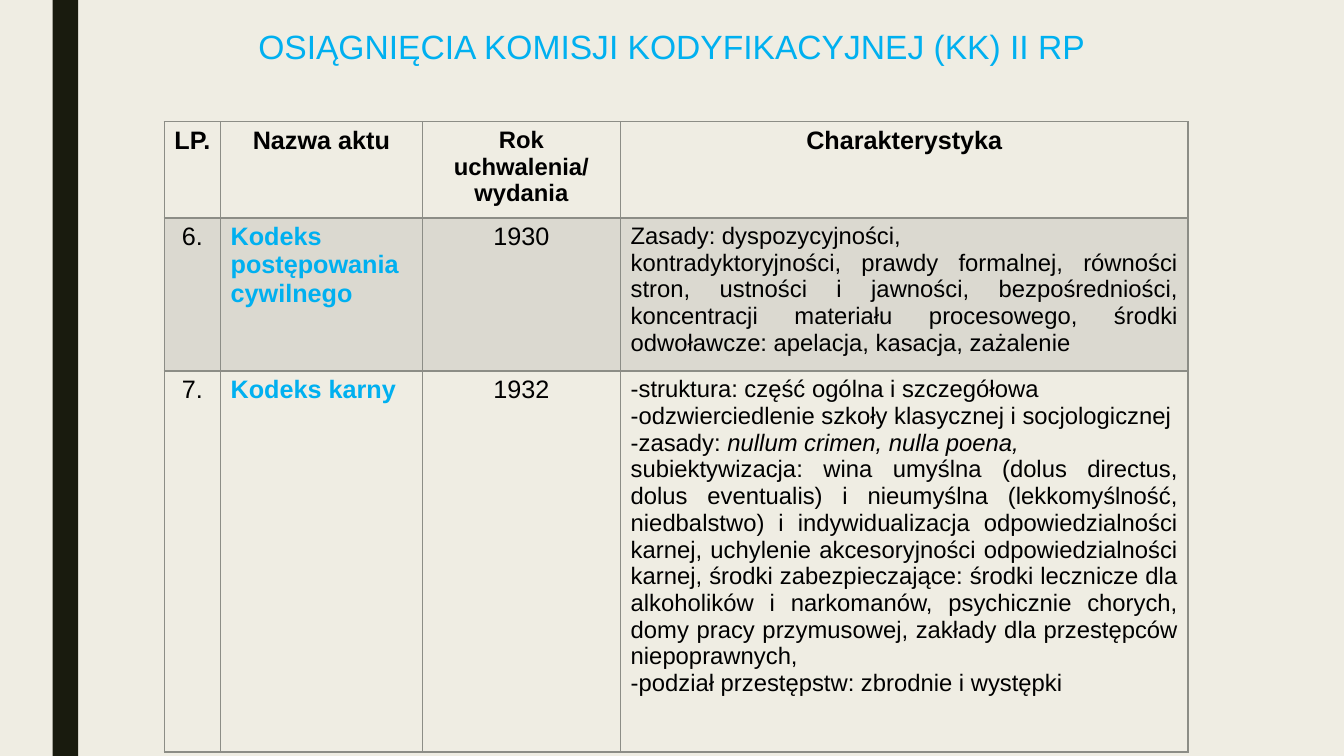
from dataclasses import dataclass

from lxml import etree
from pptx import Presentation
from pptx.dml.color import RGBColor
from pptx.enum.shapes import MSO_SHAPE
from pptx.enum.text import MSO_ANCHOR, PP_ALIGN
from pptx.oxml.ns import qn
from pptx.util import Cm, Pt

RECT = MSO_SHAPE.RECTANGLE
TOP = MSO_ANCHOR.TOP
LEFT, MID, JUST = PP_ALIGN.LEFT, PP_ALIGN.CENTER, PP_ALIGN.JUSTIFY

FONT = "Arial"
PAPER, DARK, BLUE, BLACK, GREY = "EFEDE3", "191B0E", "00B0F0", "000000", "8C8D86"
COLS = (1.42, 5.08, 5.0, 14.3)
ROWS = (2.42, 3.86, 9.6)


@dataclass
class Para:
    text: str
    align: PP_ALIGN = LEFT
    size: float = 18
    color: str = BLACK
    bold: bool = False
    tail: str = ""  # closing words in italics


def head(text: str, size: float = 18) -> list[Para]:
    return [Para(text, MID, size, bold=True)]


def mark(text: str) -> list[Para]:
    return [Para(text, MID)]


def name(*lines: str) -> list[Para]:
    return [Para(line, color=BLUE, bold=True) for line in lines]


def body(text: str, align: PP_ALIGN = JUST, tail: str = "") -> Para:
    return Para(text, align, 17, tail=tail)


GRID = [
    [head("LP."), head("Nazwa aktu"), head("Rok uchwalenia/ wydania", 17),
     head("Charakterystyka")],
    [mark("6."), name("Kodeks postępowania", "cywilnego"), mark("1930"), [
        body("Zasady: dyspozycyjności,", LEFT),
        body("kontradyktoryjności, prawdy formalnej, równości stron, ustności i "
             "jawności, bezpośredniości, koncentracji materiału procesowego, "
             "środki odwoławcze: apelacja, kasacja, zażalenie"),
    ]],
    [mark("7."), name("Kodeks karny"), mark("1932"), [
        body("-struktura: część ogólna i szczegółowa"),
        body("-odzwierciedlenie szkoły klasycznej i socjologicznej"),
        body("-zasady: ", tail="nullum crimen, nulla poena,"),
        body("subiektywizacja: wina umyślna (dolus directus, dolus eventualis) i "
             "nieumyślna (lekkomyślność, niedbalstwo) i indywidualizacja "
             "odpowiedzialności karnej, uchylenie akcesoryjności "
             "odpowiedzialności karnej, środki zabezpieczające: środki lecznicze "
             "dla alkoholików i narkomanów, psychicznie chorych, domy pracy "
             "przymusowej, zakłady dla przestępców niepoprawnych,"),
        body("-podział przestępstw: zbrodnie i występki"),
    ]],
]


def paint(fill, color: str) -> None:
    fill.solid()
    fill.fore_color.rgb = RGBColor.from_string(color)


def write(frame, paras: list[Para]) -> None:
    frame.word_wrap = True
    for i, item in enumerate(paras):
        para = frame.add_paragraph() if i else frame.paragraphs[0]
        para.alignment = item.align
        font = para.font
        font.name, font.size, font.bold = FONT, Pt(item.size), item.bold
        font.color.rgb = RGBColor.from_string(item.color)
        para.add_run().text = item.text
        if item.tail:
            run = para.add_run()
            run.text = item.tail
            run.font.italic = True


def edge(cell, side: str, width: float) -> None:
    line = etree.SubElement(cell._tc.get_or_add_tcPr(), qn(f"a:{side}"),
                            w=str(Pt(width)))
    fill = etree.SubElement(line, qn("a:solidFill"))
    etree.SubElement(fill, qn("a:srgbClr"), val=GREY)


def shade(cell) -> None:
    paint(cell.fill, GREY)
    tint = cell._tc.tcPr.find(f".//{qn('a:solidFill')}/{qn('a:srgbClr')}[last()]")
    etree.SubElement(tint, qn("a:alpha"), val="20000")


def fill_cell(cell, row: int, paras: list[Para]) -> None:
    write(cell.text_frame, paras)
    cell.vertical_anchor = TOP
    # Borders come before the fill in the cell's XML
    for side, width in (("lnL", 1), ("lnR", 1), ("lnT", 2 if row == 1 else 1),
                        ("lnB", 2 if row == 0 else 1)):
        edge(cell, side, width)
    if row == 1:
        cell.fill.background()
        paint(cell.fill, GREY)
        tint = cell._tc.tcPr.find(f"{qn('a:solidFill')}/{qn('a:srgbClr')}")
        etree.SubElement(tint, qn("a:alpha"), val="20000")
    else:
        cell.fill.background()


def add_grid(slide) -> None:
    table = slide.shapes.add_table(len(ROWS), len(COLS), Cm(4.14), Cm(3.07),
                                   Cm(sum(COLS)), Cm(sum(ROWS))).table
    table.first_row = table.horz_banding = False
    for col, width in zip(table.columns, COLS):
        col.width = Cm(width)
    for r, (height, cells) in enumerate(zip(ROWS, GRID)):
        table.rows[r].height = Cm(height)
        for c, paras in enumerate(cells):
            fill_cell(table.cell(r, c), r, paras)


def main() -> None:
    deck = Presentation()
    deck.slide_width, deck.slide_height = Cm(33.87), Cm(19.05)
    slide = deck.slides.add_slide(deck.slide_layouts[6])
    paint(slide.background.fill, PAPER)

    # Side bar
    bar = slide.shapes.add_shape(RECT, Cm(1.33), 0, Cm(0.64), Cm(19.05))
    bar.shadow.inherit = False
    paint(bar.fill, DARK)
    bar.line.fill.background()

    # Title
    title = slide.shapes.add_textbox(Cm(4.23), Cm(0.53), Cm(25.4), Cm(1.28))
    write(title.text_frame, [Para("OSIĄGNIĘCIA KOMISJI KODYFIKACYJNEJ (KK) II RP",
                                  MID, 24, BLUE)])

    # Table of acts
    add_grid(slide)
    deck.save("out.pptx")


if __name__ == "__main__":
    main()
